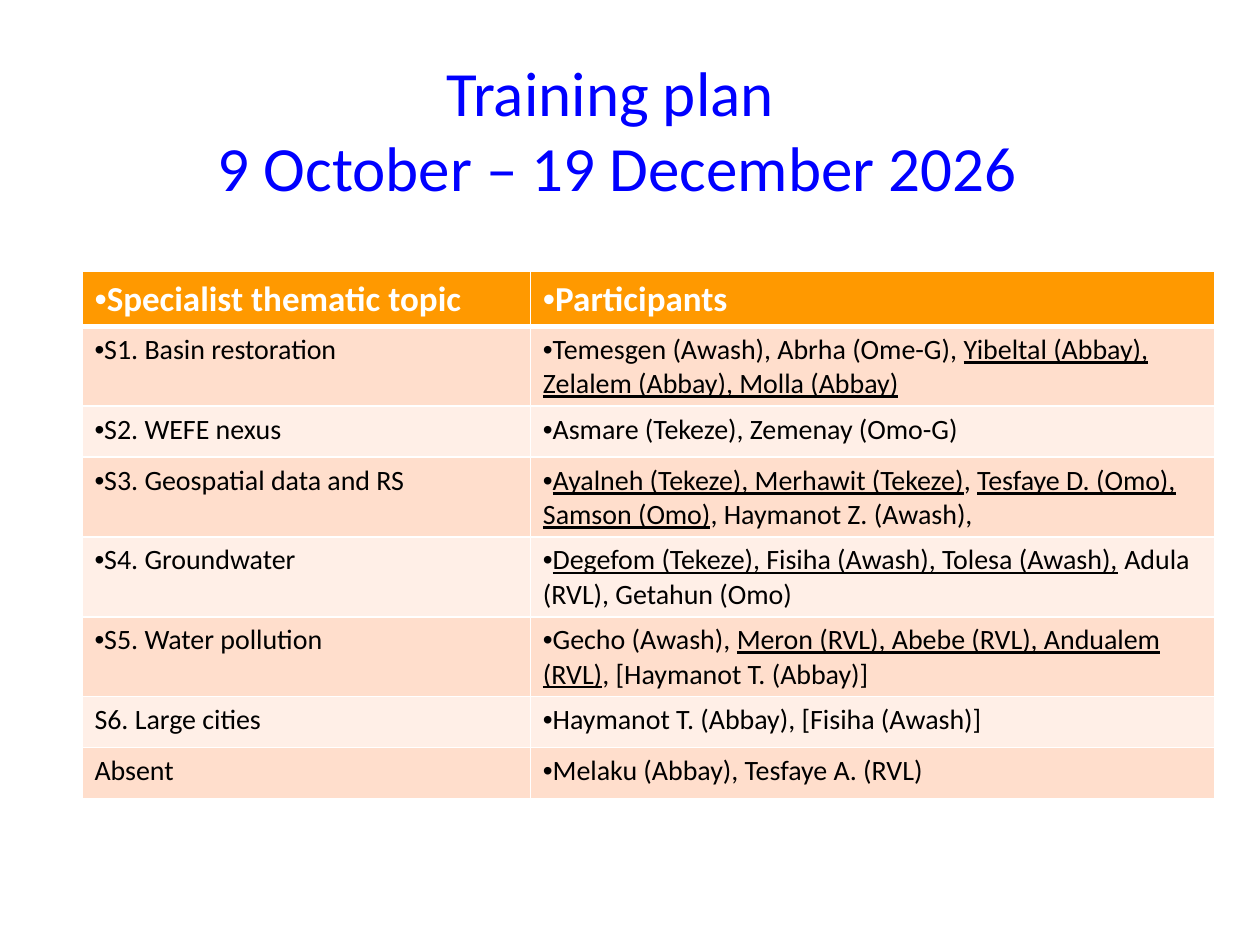
from typing import NamedTuple

from lxml.etree import SubElement
from pptx import Presentation
from pptx.dml.color import RGBColor
from pptx.enum.text import MSO_ANCHOR, PP_ALIGN
from pptx.oxml.ns import qn
from pptx.util import Pt

FONT, BULLET_FONT = "Calibri", "Arial"
WHITE, BLACK, BLUE, ORANGE = "FFFFFF", "000000", "0000FF", "FF9900"
BANDS = ("FFDECC", "FFEFE7")
LEFT, TABLE_TOP, ROW_HEIGHT = 46.8, 155.2, 29.2
COLUMN_WIDTHS = (256.3, 391.2)


class Run(NamedTuple):
    """A piece of text, underlined or plain."""
    text: str
    underline: bool = False


class Topic(NamedTuple):
    """A table row: a thematic topic and its participants."""
    name: str
    participants: tuple[Run, ...]
    bullet: bool = True


TOPICS = (
    Topic("S1. Basin restoration", (
        Run("Temesgen (Awash), Abrha (Ome-G), "),
        Run("Yibeltal (Abbay), Zelalem (Abbay), Molla (Abbay)", True))),
    Topic("S2. WEFE nexus", (Run("Asmare (Tekeze), Zemenay (Omo-G)"),)),
    Topic("S3. Geospatial data and RS", (
        Run("Ayalneh (Tekeze), Merhawit (Tekeze)", True),
        Run(", "),
        Run("Tesfaye D. (Omo), Samson (Omo)", True),
        Run(", Haymanot Z. (Awash),"))),
    Topic("S4. Groundwater", (
        Run("Degefom (Tekeze), Fisiha (Awash), Tolesa (Awash),", True),
        Run(" Adula (RVL), Getahun (Omo)"))),
    Topic("S5. Water pollution", (
        Run("Gecho (Awash), "),
        Run("Meron (RVL), Abebe (RVL), Andualem (RVL)", True),
        Run(", [Haymanot T. (Abbay)]"))),
    Topic("S6. Large cities", (Run("Haymanot T. (Abbay), [Fisiha (Awash)]"),), False),
    Topic("Absent", (Run("Melaku (Abbay), Tesfaye A. (RVL)"),), False),
)


def rgb(value: str) -> RGBColor:
    """Turn a hex string into a colour."""
    return RGBColor.from_string(value)


def add_run(p, run: Run, size: float, color: str, bold: bool = False) -> None:
    """Append a formatted run to a paragraph."""
    r = p.add_run()
    r.text = run.text
    r.font.name = FONT
    r.font.size = Pt(size)
    r.font.bold = bold
    r.font.underline = run.underline
    r.font.color.rgb = rgb(color)


def add_bullet(p) -> None:
    """Put a bullet directly before the paragraph text."""
    p_pr = p._p.get_or_add_pPr()
    p_pr.set("marL", "0")
    p_pr.set("indent", "0")
    SubElement(p_pr, qn("a:buFont"), typeface=BULLET_FONT)
    SubElement(p_pr, qn("a:buChar"), char="•")


def add_borders(cell, bottom: float) -> None:
    """Draw white cell borders with the given bottom width."""
    tc_pr = cell._tc.get_or_add_tcPr()
    for side, width in (("L", 1), ("R", 1), ("T", 1), ("B", bottom)):
        line = SubElement(tc_pr, qn(f"a:ln{side}"), w=str(Pt(width)))
        fill = SubElement(line, qn("a:solidFill"))
        SubElement(fill, qn("a:srgbClr"), val=WHITE)


def fill_cell(cell, runs: tuple[Run, ...], fill: str, bullet: bool = True,
              header: bool = False) -> None:
    """Write the runs into a cell and style it."""
    add_borders(cell, 3 if header else 1)
    cell.fill.solid()
    cell.fill.fore_color.rgb = rgb(fill)
    p = cell.text_frame.paragraphs[0]
    p.space_before = p.space_after = Pt(6)
    if bullet:
        add_bullet(p)
    for run in runs:
        add_run(p, run, 20 if header else 16, WHITE if header else BLACK, header)


def add_title(s, lines: tuple[str, ...]) -> None:
    """Add the centred title, one line break between lines."""
    tf = s.shapes.add_textbox(Pt(LEFT), Pt(37.7), Pt(612), Pt(72)).text_frame
    tf.word_wrap = True
    tf.vertical_anchor = MSO_ANCHOR.MIDDLE
    p = tf.paragraphs[0]
    p.alignment = PP_ALIGN.CENTER
    for i, line in enumerate(lines):
        if i:
            p.add_line_break()
        add_run(p, Run(line), 36, BLUE)


def add_plan(s, headings: tuple[str, ...], topics: tuple[Topic, ...]) -> None:
    """Add the table of topics and participants."""
    count = len(topics) + 1
    table = s.shapes.add_table(
        count, len(headings), Pt(LEFT), Pt(TABLE_TOP),
        Pt(sum(COLUMN_WIDTHS)), Pt(ROW_HEIGHT * count)).table
    for column, width in zip(table.columns, COLUMN_WIDTHS):
        column.width = Pt(width)
    for i, heading in enumerate(headings):
        fill_cell(table.cell(0, i), (Run(heading),), ORANGE, header=True)
    for i, topic in enumerate(topics):
        band = BANDS[i % 2]
        fill_cell(table.cell(i + 1, 0), (Run(topic.name),), band, topic.bullet)
        fill_cell(table.cell(i + 1, 1), topic.participants, band)


def main() -> None:
    """Build and save the slide."""
    prs = Presentation()
    prs.slide_width, prs.slide_height = Pt(720), Pt(540)
    s = prs.slides.add_slide(prs.slide_layouts[6])
    add_title(s, ("Training plan ", "9 October – 19 December 2026"))
    add_plan(s, ("Specialist thematic topic", "Participants"), TOPICS)
    prs.save("out.pptx")


if __name__ == "__main__":
    main()
